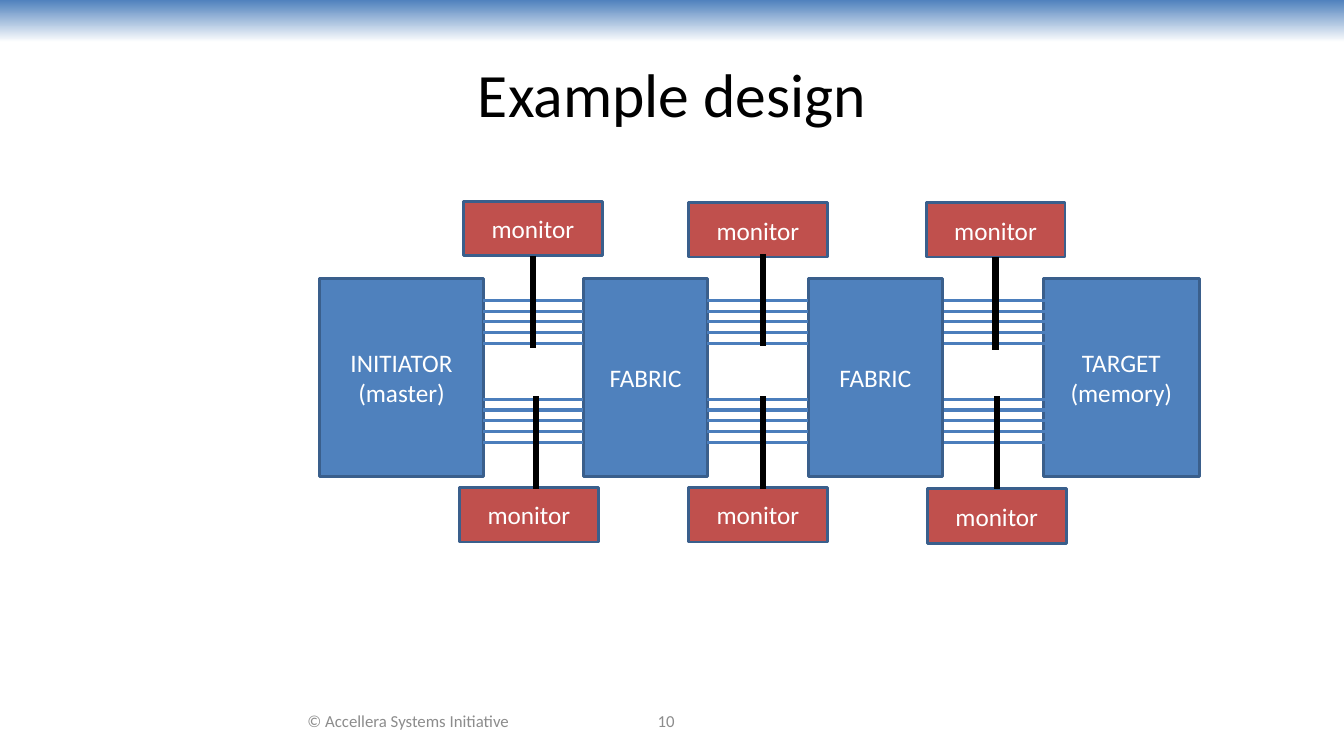
import pptx
import pptx.dml.color
import pptx.enum.shapes
import pptx.enum.text
import pptx.oxml
import pptx.util
from pptx.util import Cm, Pt

COLORS = {
    "block": "4F81BD", "outline": "3A5F8C", "wire": "4B7EBC", "monitor": "C0504D",
    "probe": "000000", "title": "000000", "footer": "8C8C8C", "white": "FFFFFF",
}
FONT = "Calibri"

# Lengths in cm, measured from the corner of the diagram
BLOCKS = [  # text, left, width
    ("INITIATOR\n(master)", 0, 4.14),
    ("FABRIC", 6.66, 3.12),
    ("FABRIC", 12.32, 3.38),
    ("TARGET\n(memory)", 18.24, 3.94),
]
BLOCK_TOP, BLOCK_HEIGHT = 1.93, 5
BUS_LEFTS = (4.12, 9.78, 15.75)
BUS_TOPS = (2.49, 4.98)
WIRES_PER_BUS, WIRE_GAP, WIRE_LENGTH = 5, 0.27, 2.53
MONITOR_WIDTH, MONITOR_HEIGHT = 3.5, 1.37
UPPER_MONITORS = [  # left, top, probe offset from the centre, probe start
    (3.63, 0, 0, 1.37), (9.3, 0.03, 0.13, 1.32), (15.29, 0.03, 0, 1.4),
]
LOWER_MONITORS = [
    (3.53, 7.21, 0.18, 7.24), (9.3, 7.21, 0.13, 7.24), (15.32, 7.24, 0, 7.24),
]
PROBE_LENGTH = 2.33


def rgb(name):
    return pptx.dml.color.RGBColor.from_string(COLORS[name])


def write_text(shape, text, size, color):
    frame = shape.text_frame
    frame.text = text
    frame.word_wrap = True
    frame.vertical_anchor = pptx.enum.text.MSO_ANCHOR.MIDDLE
    for paragraph in frame.paragraphs:
        paragraph.alignment = pptx.enum.text.PP_ALIGN.CENTER
        paragraph.font.name = FONT
        paragraph.font.size = Pt(size)
        paragraph.font.color.rgb = rgb(color)


def add_box(slide, left, top, width, height, fill, text):
    box = slide.shapes.add_shape(
        pptx.enum.shapes.MSO_SHAPE.RECTANGLE, Cm(left), Cm(top), Cm(width), Cm(height))
    box.shadow.inherit = False
    box.fill.solid()
    box.fill.fore_color.rgb = rgb(fill)
    box.line.color.rgb = rgb("outline")
    box.line.width = Pt(2)
    write_text(box, text, 18, "white")
    return box


def add_line(slide, start, end, color, width):
    line = slide.shapes.add_connector(
        pptx.enum.shapes.MSO_CONNECTOR.STRAIGHT, *(Cm(value) for value in start + end))
    line.line.color.rgb = rgb(color)
    line.line.width = Pt(width)
    pptx.oxml.ns  # namespace helpers
    line._element.spPr.get_or_add_ln().addnext(
        pptx.oxml.parse_xml(
            '<a:effectLst xmlns:a="http://schemas.openxmlformats.org/drawingml/2006/main"/>'))
    return line


def add_bus(slide, left, top):
    for index in range(WIRES_PER_BUS):
        y = top + index * WIRE_GAP
        add_line(slide, (left, y), (left + WIRE_LENGTH, y), "wire", 2.25)


def add_monitor(slide, left, top, offset, probe_start, direction):
    """Add a monitor whose probe runs down (direction 1) or up (-1) to the bus."""
    monitor = add_box(slide, left, top, MONITOR_WIDTH, MONITOR_HEIGHT, "monitor", "monitor")
    x = left + MONITOR_WIDTH / 2 + offset
    probe = add_line(slide, (x, probe_start),
                     (x, probe_start + direction * PROBE_LENGTH), "probe", 4.5)
    if offset == 0:
        probe.begin_connect(monitor, 2 if direction == 1 else 0)


def add_diagram(slide, left, top):
    for text, block_left, width in BLOCKS:
        add_box(slide, left + block_left, top + BLOCK_TOP, width, BLOCK_HEIGHT, "block", text)
    for bus_left in BUS_LEFTS:
        for bus_top in BUS_TOPS:
            add_bus(slide, left + bus_left, top + bus_top)
    for monitors, direction in ((UPPER_MONITORS, 1), (LOWER_MONITORS, -1)):
        for monitor_left, monitor_top, offset, probe_start in monitors:
            add_monitor(slide, left + monitor_left, top + monitor_top, offset,
                        top + probe_start, direction)


def add_header_band(slide, width, height):
    band = slide.shapes.add_shape(
        pptx.enum.shapes.MSO_SHAPE.RECTANGLE, 0, 0, width, height)
    band.shadow.inherit = False
    band.line.fill.background()
    band.fill.gradient()
    band.fill.gradient_angle = 270
    for stop, color, position in zip(band.fill.gradient_stops, ("block", "white"), (0, 1)):
        stop.color.rgb = rgb(color)
        stop.position = position


def place_title(slide, left, top, width, height):
    title = slide.shapes.title
    title.left, title.top, title.width, title.height = left, top, width, height
    write_text(title, "Example design", 44, "title")


def add_footer(slide, left, top, height):
    for text, offset, width in (("© Accellera Systems Initiative", 0, 8.18),
                                ("10", 7.34, 6.5)):
        box = slide.shapes.add_textbox(Cm(left + offset), Cm(top), Cm(width), Cm(height))
        write_text(box, text, 12, "footer")


def main():
    presentation = pptx.Presentation()
    presentation.slide_width = Cm(33.87)
    presentation.slide_height = Cm(19.05)
    slide = presentation.slides.add_slide(presentation.slide_layouts[5])
    add_header_band(slide, presentation.slide_width, Cm(1.07))
    place_title(slide, Cm(1.7), Cm(0.76), Cm(30.48), Cm(3.18))
    add_diagram(slide, 8.05, 5.08)
    add_footer(slide, 6.2, 17.65, 1.02)
    presentation.save("out.pptx")


if __name__ == "__main__":
    main()
